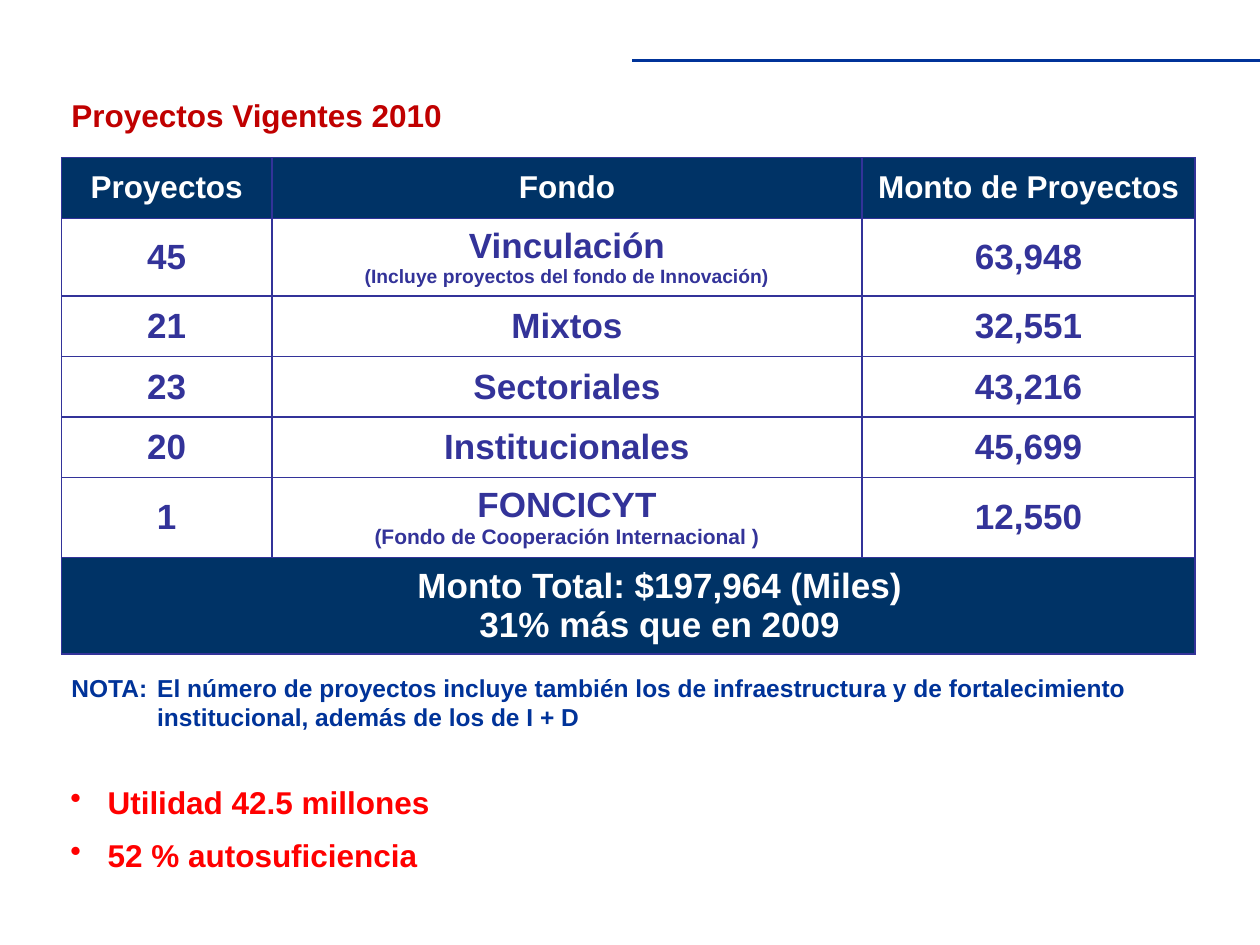
import pptx
import pptx.dml.color
import pptx.enum.shapes
import pptx.enum.text
import pptx.util
import lxml.etree
from pptx.oxml.ns import qn

Cm, Pt = pptx.util.Cm, pptx.util.Pt
ALIGN = pptx.enum.text.PP_ALIGN
ANCHOR = pptx.enum.text.MSO_ANCHOR

HUES = {
    "navy": "003366", "blue": "003399", "grid": "333399",
    "white": "FFFFFF", "wine": "C00000", "red": "FF0000",
}


def tint(name):
    return pptx.dml.color.RGBColor.from_string(HUES[name])


def write(par, text, size=18, hue="blue", align=ALIGN.LEFT, left=0, hang=0,
          mark=None, line=None, before=0):
    """Fill a paragraph with bold Arial text in the given format."""
    props = par._p.get_or_add_pPr()
    props.set("marL", str(Cm(left)))
    props.set("indent", str(-Cm(hang)))
    if mark:
        lxml.etree.SubElement(props, qn("a:buChar"), char=mark)
    par.alignment = align
    par.space_before = Pt(before)
    if line:
        par.line_spacing = Pt(line)
    run = par.add_run()
    run.text = text
    font = run.font
    font.name, font.size, font.bold = "Arial", Pt(size), True
    font.color.rgb = tint(hue)


class Page:
    def __init__(self, slide, edge="grid", width=1):
        self.slide = slide
        self.edge = edge
        self.width = width

    def rule(self, x1, x2, y, hue, width):
        line = self.slide.shapes.add_connector(
            pptx.enum.shapes.MSO_CONNECTOR.STRAIGHT, Cm(x1), Cm(y), Cm(x2), Cm(y))
        line.line.color.rgb = tint(hue)
        line.line.width = Pt(width)
        lxml.etree.SubElement(line._element.spPr, qn("a:effectLst"))

    def text(self, x, y, w, h, lines, anchor=ANCHOR.TOP, gap=0, **form):
        frame = self.slide.shapes.add_textbox(Cm(x), Cm(y), Cm(w), Cm(h)).text_frame
        frame.word_wrap = True
        frame.vertical_anchor = anchor
        for i, words in enumerate(lines):
            par = frame.add_paragraph() if i else frame.paragraphs[0]
            write(par, words, before=gap if i else 0, **form)

    def grid(self, x, y, cols, rows):
        table = self.slide.shapes.add_table(
            len(rows), len(cols), Cm(x), Cm(y), Cm(sum(cols)), Cm(sum(rows))).table
        table.first_row = table.horz_banding = False
        for col, size in zip(table.columns, cols):
            col.width = Cm(size)
        for row, size in zip(table.rows, rows):
            row.height = Cm(size)
        for cell in table.iter_cells():
            self.frame(cell)
        return table

    def frame(self, cell):
        props = cell._tc.get_or_add_tcPr()
        for side in ("lnL", "lnR", "lnT", "lnB"):
            line = lxml.etree.SubElement(props, qn("a:" + side), w=str(Pt(self.width)))
            fill = lxml.etree.SubElement(line, qn("a:solidFill"))
            lxml.etree.SubElement(fill, qn("a:srgbClr"), val=HUES[self.edge])

    def cell(self, cell, lines, sizes, hue, fill=None, left=0):
        cell.vertical_anchor = ANCHOR.MIDDLE
        if fill:
            cell.fill.solid()
            cell.fill.fore_color.rgb = tint(fill)
        else:
            cell.fill.background()
        for i, (words, size) in enumerate(zip(lines, sizes)):
            par = cell.text_frame.add_paragraph() if i else cell.text_frame.paragraphs[0]
            write(par, words, size=size, hue=hue, align=ALIGN.CENTER, left=left)


HEAD = ["Proyectos", "Fondo", "Monto de Proyectos"]
FUNDS = [
    ("45", "Vinculación", "63,948"),
    ("21", "Mixtos", "32,551"),
    ("23", "Sectoriales", "43,216"),
    ("20", "Institucionales", "45,699"),
    ("1", "FONCICYT", "12,550"),
]
# Small second line under a fund, with its size
NOTES = {
    "Vinculación": ("(Incluye proyectos del fondo de Innovación)", 11),
    "FONCICYT": ("(Fondo de Cooperación Internacional )", 12),
}
TOTAL = ["Monto Total: $197,964 (Miles)", "31% más que en 2009"]


def main():
    deck = pptx.Presentation()
    deck.slide_width, deck.slide_height = Cm(25.4), Cm(19.05)
    page = Page(deck.slides.add_slide(deck.slide_layouts[6]))

    # Top rule and title
    page.rule(12.75, 25.4, 1.22, "blue", 1.5)
    page.text(1.19, 1.8, 12.67, 1.02, ["Proyectos Vigentes 2010"],
              anchor=ANCHOR.MIDDLE, hue="wine")

    # Table of funds
    table = page.grid(1.24, 3.18, [4.24, 11.9, 6.71],
                      [1.22, 1.48, 1.22, 1.22, 1.22, 1.51, 1.84])
    for c, name in enumerate(HEAD):
        page.cell(table.cell(0, c), [name], [18], "white", "navy")
    for r, fund in enumerate(FUNDS, 1):
        for c, words in enumerate(fund):
            lines, sizes = [words], [20]
            if words in NOTES:
                note, size = NOTES[words]
                lines.append(note)
                sizes.append(size)
            page.cell(table.cell(r, c), lines, sizes, "grid")

    # Total across the last row
    last = len(FUNDS) + 1
    table.cell(last, 0).merge(table.cell(last, 2))
    page.cell(table.cell(last, 0), TOTAL, [20, 20], "white", "navy", left=1.27)

    # Note and key results
    page.text(1.19, 13.44, 22.83, 1.45,
              ["NOTA:\tEl número de proyectos incluye también los de infraestructura "
               "y de fortalecimiento institucional, además de los de I + D"],
              size=14, left=1.73, hang=1.73)
    page.text(1.17, 15.9, 11.84, 1.85,
              ["Utilidad 42.5 millones", "52 % autosuficiencia"],
              hue="red", left=0.75, hang=0.75, mark="•", line=15, gap=15)

    deck.save("out.pptx")


if __name__ == "__main__":
    main()
